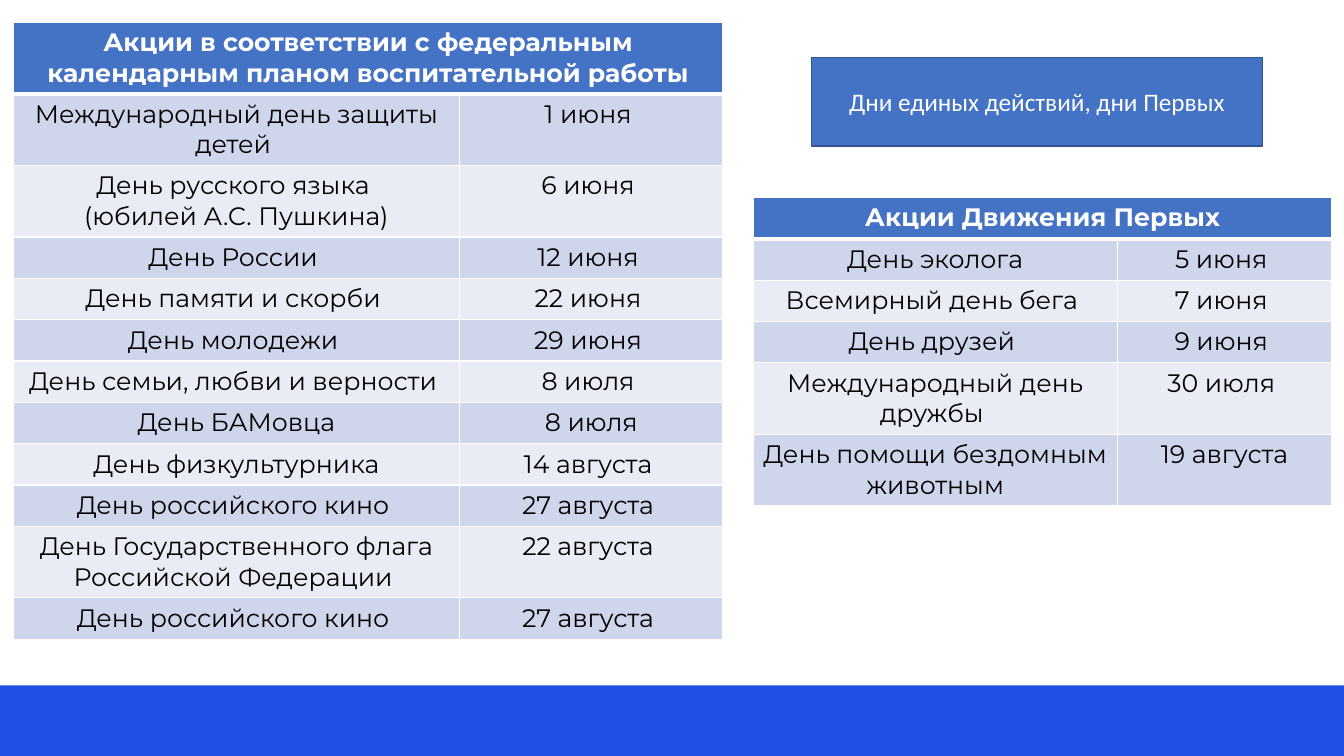
from dataclasses import dataclass

from lxml import etree
from pptx import Presentation
from pptx.dml.color import RGBColor
from pptx.enum.shapes import MSO_SHAPE
from pptx.enum.text import MSO_ANCHOR, MSO_AUTO_SIZE, PP_ALIGN
from pptx.oxml.ns import qn
from pptx.slide import Slide
from pptx.table import _Cell
from pptx.text.text import _Paragraph
from pptx.util import Inches, Pt

CENTER = PP_ALIGN.CENTER
MIDDLE = MSO_ANCHOR.MIDDLE
NO_AUTOFIT = MSO_AUTO_SIZE.NONE
RECTANGLE = MSO_SHAPE.RECTANGLE

WHITE = RGBColor(0xFF, 0xFF, 0xFF)
BLACK = RGBColor(0x00, 0x00, 0x00)
BLUE = RGBColor(0x44, 0x72, 0xC4)
DARK_BLUE = RGBColor(0x32, 0x54, 0x91)
FOOTER_BLUE = RGBColor(0x20, 0x4F, 0xE3)
BANDS = (RGBColor(0xCF, 0xD5, 0xEA), RGBColor(0xE9, 0xEB, 0xF5))

SLIDE_W, SLIDE_H = 13.33, 7.5
FOOTER_H = 0.7
ROW_H = 0.41
THIN, THICK = Pt(1), Pt(3)
HEADER_FONT = {"name": "Montserrat", "size": Pt(18), "bold": True}
BODY_FONT = {"name": "Montserrat", "size": Pt(18), "bold": False}
TITLE_FONT = {"name": "Calibri", "size": Pt(18), "bold": False}


@dataclass(frozen=True)
class EventTable:
    left: float
    top: float
    widths: tuple[float, float]
    heading: str
    events: tuple[tuple[str, str], ...]


EVENT_TABLES = (
    EventTable(
        0.13, 0.22, (4.43, 2.61),
        "Акции в соответствии с федеральным календарным планом воспитательной работы",
        (
            ("Международный день защиты детей ", "1 июня "),
            ("День русского языка \n(юбилей А.С. Пушкина)", "6 июня "),
            ("День России ", "12 июня "),
            ("День памяти и скорби ", "22 июня "),
            ("День молодежи ", "29 июня "),
            ("День семьи, любви и верности ", "8 июля "),
            ("День БАМовца", "8 июля"),
            ("День физкультурника", "14 августа "),
            ("День российского кино ", "27 августа "),
            ("День Государственного флага Российской Федерации ", "22 августа "),
            ("День российского кино ", "27 августа "),
        ),
    ),
    EventTable(
        7.47, 1.96, (3.61, 2.13),
        "Акции Движения Первых",
        (
            ("День эколога", "5 июня "),
            ("Всемирный день бега ", "7 июня "),
            ("День друзей ", "9 июня "),
            ("Международный день дружбы ", "30 июля "),
            ("День помощи бездомным животным", "19 августа"),
        ),
    ),
)


def write_centred(p: _Paragraph, text: str, font: dict, color: RGBColor) -> None:
    p.text = text
    p.alignment = CENTER
    for r in p.runs:
        for name, value in font.items():
            setattr(r.font, name, value)
        r.font.color.rgb = color


def set_borders(cell: _Cell, top: int, bottom: int) -> None:
    """Draw white cell borders; their elements must precede the fill."""
    tc_pr = cell._tc.get_or_add_tcPr()
    widths = {"a:lnL": THIN, "a:lnR": THIN, "a:lnT": top, "a:lnB": bottom}
    for i, (tag, width) in enumerate(widths.items()):
        ln = etree.Element(qn(tag), w=str(int(width)))
        fill = etree.SubElement(ln, qn("a:solidFill"))
        etree.SubElement(fill, qn("a:srgbClr"), val=str(WHITE))
        tc_pr.insert(i, ln)


def add_event_table(s: Slide, spec_: EventTable) -> None:
    rows = (((spec_.heading, ""),) + spec_.events)
    frame = s.shapes.add_table(
        len(rows), len(spec_.widths), Inches(spec_.left), Inches(spec_.top),
        Inches(sum(spec_.widths)), Inches(ROW_H * len(rows)),
    )
    table = frame.table
    for column, width in zip(table.columns, spec_.widths):
        column.width = Inches(width)
    table.cell(0, 0).merge(table.cell(0, 1))

    for i, texts in enumerate(rows):
        header = i == 0
        for j, text in enumerate(texts):
            cell = table.cell(i, j)
            cell.fill.solid()
            cell.fill.fore_color.rgb = BLUE if header else BANDS[(i - 1) % 2]
            set_borders(cell, THICK if i == 1 else THIN, THICK if header else THIN)
            if text:
                write_centred(
                    cell.text_frame.paragraphs[0], text,
                    HEADER_FONT if header else BODY_FONT,
                    WHITE if header else BLACK,
                )


def add_footer(s: Slide) -> None:
    footer = s.shapes.add_shape(
        RECTANGLE, 0, Inches(SLIDE_H - FOOTER_H), Inches(SLIDE_W), Inches(FOOTER_H)
    )
    footer.shadow.inherit = False
    footer.fill.solid()
    footer.fill.fore_color.rgb = FOOTER_BLUE
    footer.line.fill.background()


def format_title(s: Slide) -> None:
    title = s.shapes.title
    title.left, title.top = Inches(8.05), Inches(0.57)
    title.width, title.height = Inches(4.47), Inches(0.88)
    title.fill.solid()
    title.fill.fore_color.rgb = BLUE
    title.line.color.rgb = DARK_BLUE
    title.line.width = THIN
    tf = title.text_frame
    tf.auto_size = NO_AUTOFIT
    tf.word_wrap = True
    tf.vertical_anchor = MIDDLE
    write_centred(tf.paragraphs[0], "Дни единых действий, дни Первых", TITLE_FONT, WHITE)


def main() -> None:
    prs = Presentation()
    prs.slide_width, prs.slide_height = Inches(SLIDE_W), Inches(SLIDE_H)
    s = prs.slides.add_slide(prs.slide_layouts.get_by_name("Title Only"))
    add_footer(s)
    for event_table in EVENT_TABLES:
        add_event_table(s, event_table)
    format_title(s)
    prs.save("out.pptx")


if __name__ == "__main__":
    main()
